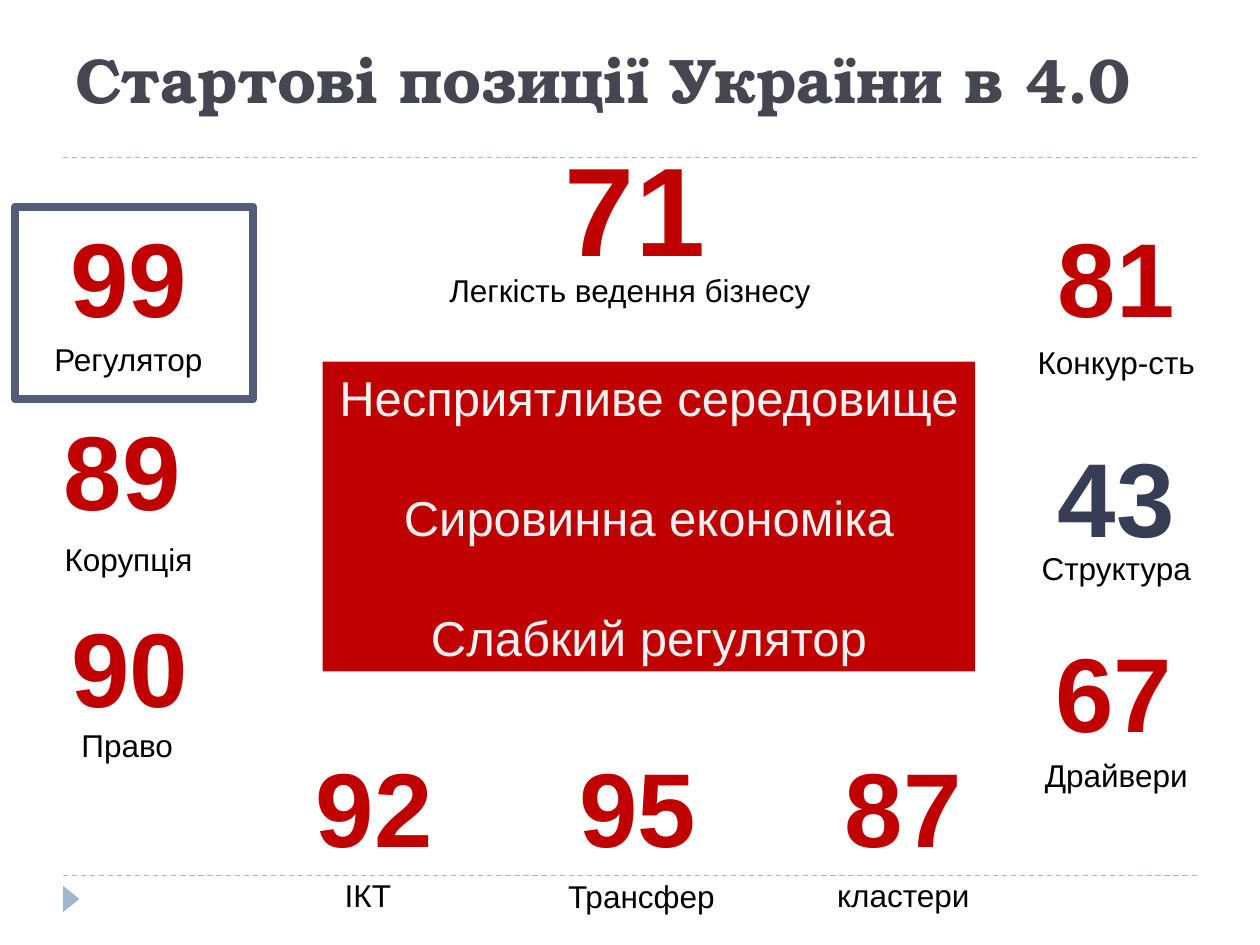
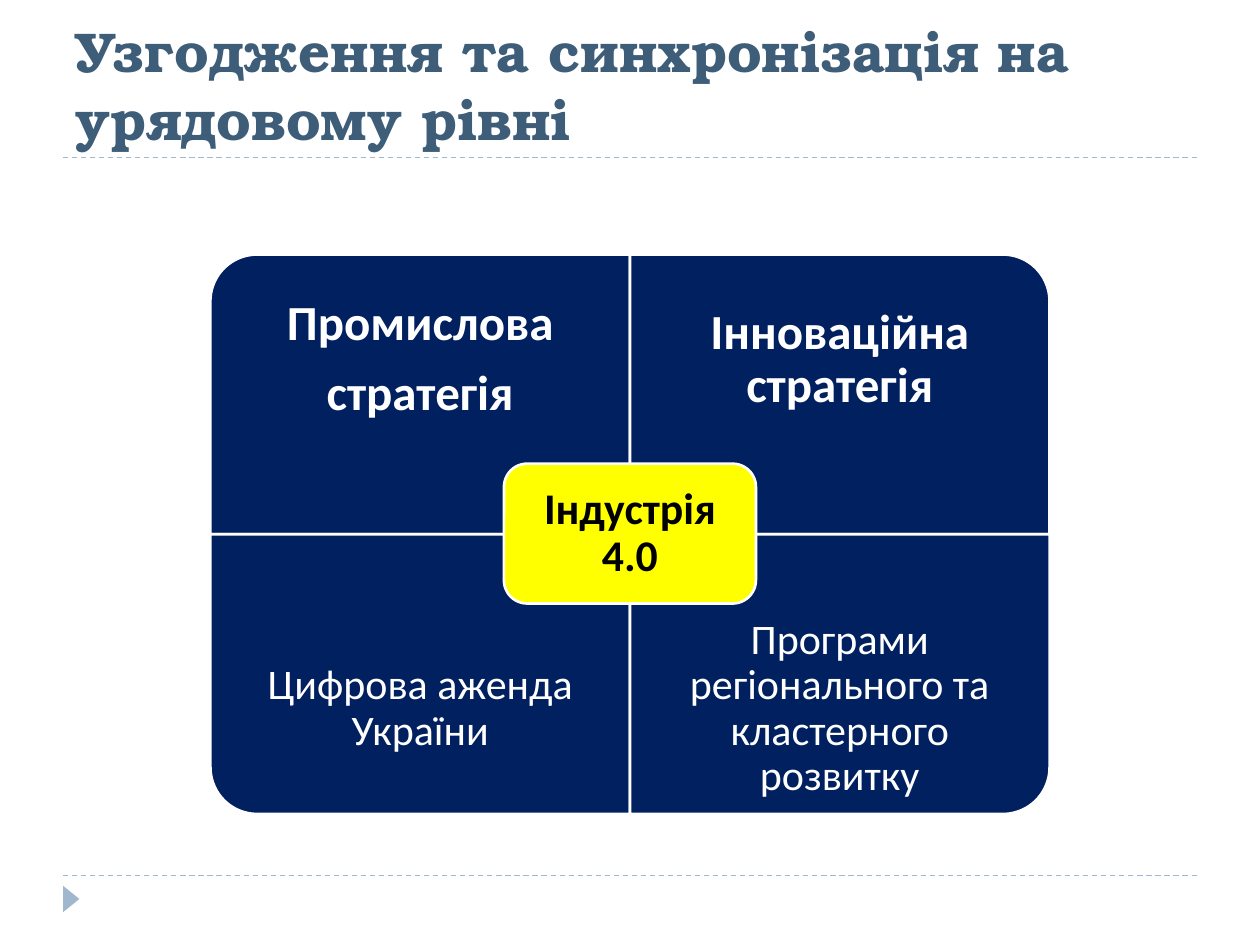
"""Two slides on Ukraine's starting position and policy alignment for Industry 4.0."""
import dataclasses

import lxml.etree
import pptx
import pptx.dml.color
import pptx.enum.dml
import pptx.enum.shapes
import pptx.enum.text
import pptx.oxml.ns
import pptx.util

SHAPE = pptx.enum.shapes.MSO_SHAPE
ANCHOR = pptx.enum.text.MSO_ANCHOR
ALIGN = pptx.enum.text.PP_ALIGN
COLUMNS, ROWS = 100, 75


@dataclasses.dataclass(frozen=True)
class Theme:
    """Colours, fonts and type sizes of the deck."""
    rule: str = "9FB8CD"
    title_dark: str = "464653"
    title_blue: str = "3E5D78"
    red: str = "C00000"
    slate: str = "373D54"
    rank_outline: str = "727CA3"
    highlight: str = "545C79"
    navy: str = "002060"
    yellow: str = "FFFF00"
    white: str = "FFFFFF"
    off_white: str = "F2F2F2"
    black: str = "000000"
    title_font: str = "TeX Gyre Bonum"
    rank_font: str = "Arial"
    matrix_font: str = "Calibri"
    title_size: int = 36
    long_title_size: int = 32
    top_rank_size: int = 72
    rank_size: int = 60
    label_size: int = 18
    heading_size: int = 28
    hub_size: int = 25
    body_size: int = 24


THEME = Theme()
SLIDE_WIDTH, SLIDE_HEIGHT = pptx.util.Inches(10), pptx.util.Inches(7.5)


def col(count):
    """Return the length of a number of grid columns."""
    return round(SLIDE_WIDTH * count / COLUMNS)


def row(count):
    """Return the length of a number of grid rows."""
    return round(SLIDE_HEIGHT * count / ROWS)


def rgb(code):
    """Return a colour from its hex code."""
    return pptx.dml.color.RGBColor.from_string(code)


def write(element, lines, font, size, colour, bold=False, align=ALIGN.CENTER,
          anchor=ANCHOR.TOP, inset=None, wrap=True, spacing=None, before=0, after=0):
    """Write lines into an element as evenly formatted paragraphs."""
    frame = element.text_frame
    frame.text = "\n".join(lines)
    frame.word_wrap, frame.vertical_anchor = wrap, anchor
    if inset is not None:
        frame.margin_left = frame.margin_right = col(inset)
        frame.margin_top = frame.margin_bottom = row(inset)
    for index, paragraph in enumerate(frame.paragraphs):
        paragraph.alignment = align
        paragraph.line_spacing = spacing
        paragraph.space_before = pptx.util.Pt(before if index else 0)
        paragraph.space_after = pptx.util.Pt(after)
        for run in paragraph.runs:
            run.font.name, run.font.size, run.font.bold = font, pptx.util.Pt(size), bold
            run.font.color.rgb = rgb(colour)


def add_text(slide, left, top, width, height, lines, *style, **options):
    """Add a text box placed on the grid."""
    box = slide.shapes.add_textbox(col(left), row(top), col(width), row(height))
    write(box, lines, *style, **options)
    return box


def add_block(slide, kind, left, top, width, height, fill=None, line=None, weight=1.5):
    """Add a flat preset shape placed on the grid."""
    block = slide.shapes.add_shape(kind, col(left), row(top), col(width), row(height))
    block.shadow.inherit = False
    if fill:
        block.fill.solid()
        block.fill.fore_color.rgb = rgb(fill)
    else:
        block.fill.background()
    if line:
        block.line.color.rgb = rgb(line)
        block.line.width = pptx.util.Pt(weight)
    else:
        block.line.fill.background()
    return block


def add_rule(slide, top):
    """Add a dashed rule across the slide."""
    rule = slide.shapes.add_connector(
        pptx.enum.shapes.MSO_CONNECTOR.STRAIGHT, col(5), row(top), col(95), row(top))
    rule.line.color.rgb = rgb(THEME.rule)
    rule.line.width = pptx.util.Pt(0.75)
    rule.line.dash_style = pptx.enum.dml.MSO_LINE.DASH
    lxml.etree.SubElement(rule._element.spPr, pptx.oxml.ns.qn("a:effectLst"))


def start_slide(deck, title, top, size, colour):
    """Add a slide with the shared rules, footer marker and title."""
    slide = deck.slides.add_slide(deck.slide_layouts[6])
    for rule_top in (69.5, 12.5):
        add_rule(slide, rule_top)
    marker = add_block(slide, SHAPE.ISOSCELES_TRIANGLE, 4.6, 70.7, 2.1, 1.3, THEME.rule)
    marker.rotation = 90
    add_text(slide, 5, top, 90, 10, [title], THEME.title_font, size, colour,
             bold=True, align=ALIGN.LEFT, anchor=ANCHOR.BOTTOM)
    return slide


def outline_text(box, colour):
    """Draw a one-point outline around the text of a box."""
    for run in box.text_frame.paragraphs[0].runs:
        outline = lxml.etree.Element(pptx.oxml.ns.qn("a:ln"), w=str(pptx.util.Pt(1)))
        fill = lxml.etree.SubElement(outline, pptx.oxml.ns.qn("a:solidFill"))
        lxml.etree.SubElement(fill, pptx.oxml.ns.qn("a:srgbClr"), val=colour)
        run.font._element.insert(0, outline)


def add_rank(slide, rank, centre, top, label, label_centre, label_top,
             colour=THEME.red, size=THEME.rank_size, label_width=16):
    """Add a large rank with the name of its indicator."""
    width, height = size * 0.19, size * 0.185
    number = add_text(slide, centre - width / 2, top, width, height, [rank],
                      THEME.rank_font, size, colour, bold=True, wrap=False)
    outline_text(number, THEME.rank_outline)
    add_text(slide, label_centre - label_width / 2, label_top, label_width, 4, [label],
             THEME.rank_font, THEME.label_size, THEME.black)


def build_positions(deck):
    """Build the slide of Ukraine's ranks."""
    slide = start_slide(deck, "Стартові позиції України в 4.0", -0.3,
                        THEME.title_size, THEME.title_dark)
    verdict = add_block(slide, SHAPE.RECTANGLE, 25.6, 28.7, 51.8, 24.6, THEME.red)
    write(verdict, ["Несприятливе середовище", "Сировинна економіка", "Слабкий регулятор"],
          THEME.rank_font, THEME.heading_size, THEME.off_white,
          anchor=ANCHOR.MIDDLE, wrap=False, before=35)
    add_rank(slide, "71", 50.4, 9.9, "Легкість ведення бізнесу", 50, 21,
             size=THEME.top_rank_size, label_width=36.2)
    add_rank(slide, "43", 88.6, 33.8, "Структура", 88.6, 43.1, colour=THEME.slate)
    for indicator in (
        ("99", 10.2, 16.4, "Регулятор", 10.2, 26.5),
        ("89", 9.7, 31.7, "Корупція", 10.2, 42.4),
        ("90", 10.3, 47.3, "Право", 10.1, 57.1),
        ("81", 88.6, 16.4, "Конкур-сть", 88.6, 26.7),
        ("67", 88.4, 49.3, "Драйвери", 88.6, 59.5),
        ("92", 29.7, 58.4, "ІКТ", 29.2, 69),
        ("95", 50.6, 58.4, "Трансфер", 50.9, 69.1),
        ("87", 71.7, 58.4, "кластери", 71.7, 69),
    ):
        add_rank(slide, *indicator)
    add_block(slide, SHAPE.RECTANGLE, 1.2, 16.4, 18.9, 15.3,
              line=THEME.highlight, weight=4.5)


def add_quadrant(slide, across, down, rotation, lines, size, bold):
    """Add one matrix quadrant, its rounded corner turned outwards."""
    width, height, text_height = 33.3, 22.2, 16.7
    left, top = 50 + (across - 1) * width, 42.4 + (down - 1) * height
    wide, high = (height, width) if rotation % 180 else (width, height)
    panel = add_block(slide, SHAPE.ROUND_1_RECTANGLE, left + (width - wide) / 2,
                      top + (height - high) / 2, wide, high, THEME.navy, THEME.white)
    panel.rotation = rotation
    add_text(slide, left, top + down * (height - text_height), width, text_height, lines,
             THEME.matrix_font, size, THEME.white, bold=bold, anchor=ANCHOR.MIDDLE,
             inset=size * 0.08, spacing=0.9, after=size * 0.35)


def build_alignment(deck):
    """Build the matrix of government strategies around Industry 4.0."""
    slide = start_slide(deck, "Узгодження та синхронізація на урядовому рівні", 2.5,
                        THEME.long_title_size, THEME.title_blue)
    heading, body = (THEME.heading_size, True), (THEME.body_size, False)
    add_quadrant(slide, 0, 0, 270, ["Промислова", "стратегія"], *heading)
    add_quadrant(slide, 1, 0, 0, ["Інноваційна стратегія"], *heading)
    add_quadrant(slide, 0, 1, 180, ["Цифрова аженда України"], *body)
    add_quadrant(slide, 1, 1, 90, ["Програми регіонального та кластерного розвитку"], *body)
    hub = add_block(slide, SHAPE.ROUNDED_RECTANGLE, 40, 36.8, 20, 11.1,
                    THEME.yellow, THEME.white)
    write(hub, ["Індустрія 4.0"], THEME.matrix_font, THEME.hub_size, THEME.black,
          bold=True, anchor=ANCHOR.MIDDLE, inset=1, spacing=0.9)


def main():
    """Build and save the deck."""
    deck = pptx.Presentation()
    deck.slide_width, deck.slide_height = SLIDE_WIDTH, SLIDE_HEIGHT
    build_positions(deck)
    build_alignment(deck)
    deck.save("out.pptx")


if __name__ == "__main__":
    main()
